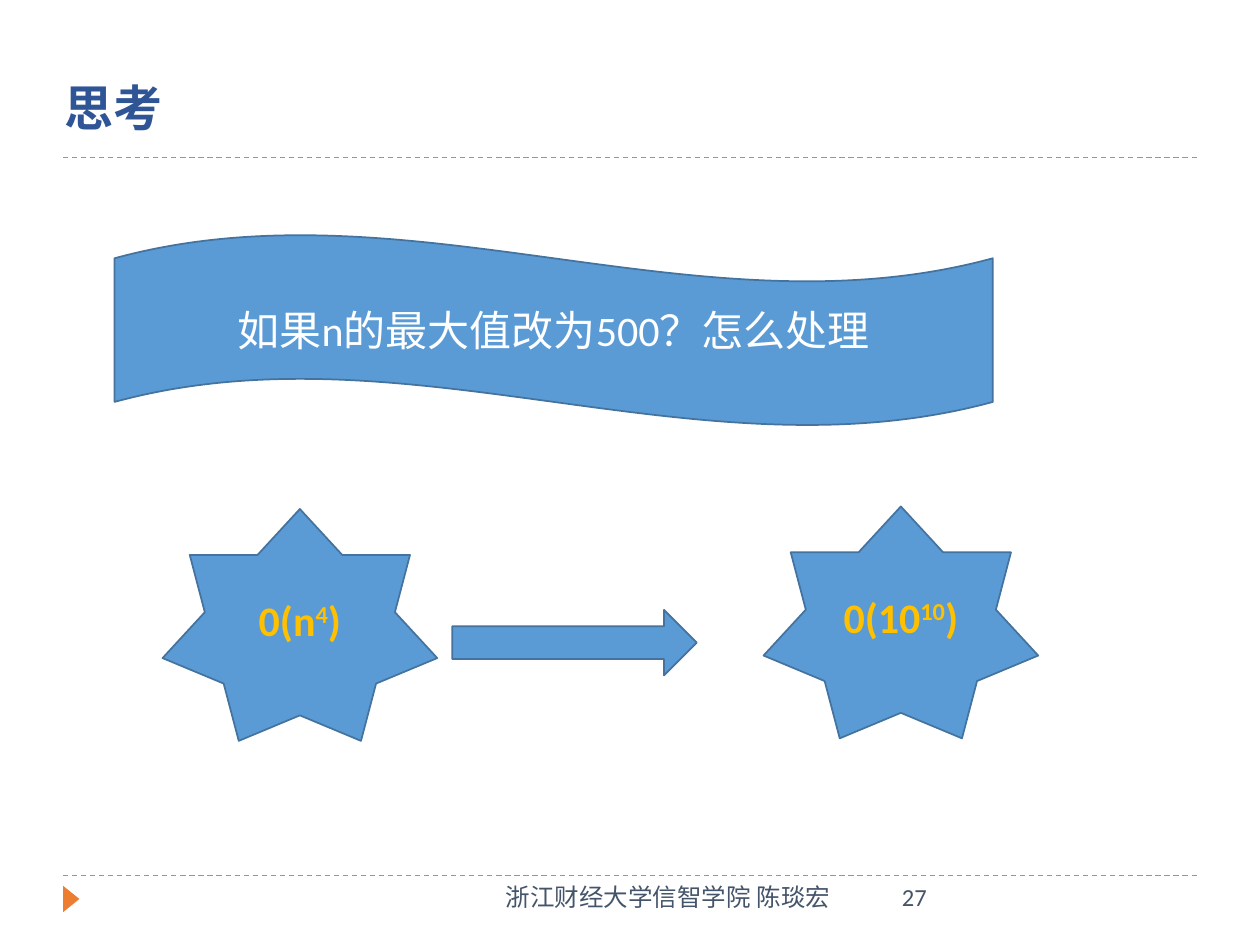
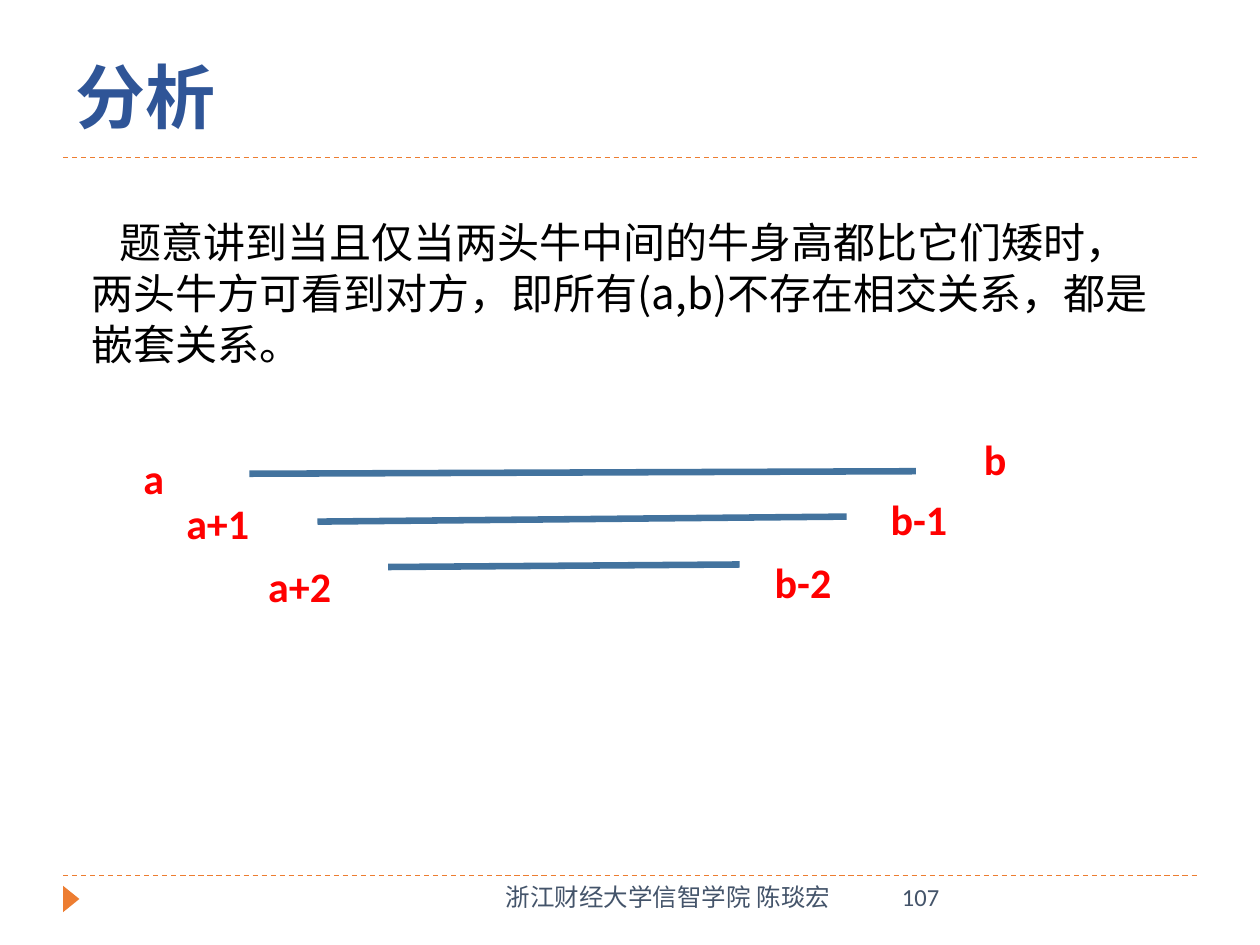
from dataclasses import dataclass

from pptx import Presentation
from pptx.dml.color import RGBColor
from pptx.enum.dml import MSO_LINE
from pptx.enum.shapes import MSO_CONNECTOR, MSO_SHAPE
from pptx.enum.text import MSO_ANCHOR, PP_ALIGN
from pptx.oxml.ns import qn
from pptx.oxml.xmlchemy import OxmlElement
from pptx.util import Pt

PX = 9144  # 100 px to the inch
TITLE_ONLY = 5
STRAIGHT = MSO_CONNECTOR.STRAIGHT
DASH = MSO_LINE.DASH
WAVE, STAR = MSO_SHAPE.WAVE, MSO_SHAPE.STAR_7_POINT
ARROW, TRIANGLE = MSO_SHAPE.RIGHT_ARROW, MSO_SHAPE.ISOSCELES_TRIANGLE
TOP, MIDDLE = MSO_ANCHOR.TOP, MSO_ANCHOR.MIDDLE
LEFT, CENTER, RIGHT = PP_ALIGN.LEFT, PP_ALIGN.CENTER, PP_ALIGN.RIGHT


@dataclass(frozen=True)
class Theme:
    latin: str = "Calibri"
    cjk: str = "Noto Sans CJK SC"
    accent: str = "ED7D31"
    footer: str = "44546A"
    title: str = "2F5597"
    fill: str = "5B9BD5"
    outline: str = "43739E"
    on_fill: str = "FFFFFF"
    formula: str = "FFC000"
    body: str = "000000"
    label: str = "FF0000"
    footer_size: int = 14
    body_size: int = 24


THEME = Theme()
FOOTER_TEXT = "浙江财经大学信智学院 陈琰宏"


def px(*lengths):
    return [round(length * PX) for length in lengths]


def rgb(code):
    return RGBColor.from_string(code)


def style_run(run, size, color, bold=False, latin=THEME.latin):
    font = run.font
    font.size, font.bold, font.name = Pt(size), bold, latin
    font.color.rgb = rgb(color)
    east_asian = OxmlElement("a:ea")
    east_asian.set("typeface", THEME.cjk)
    run._r.get_or_add_rPr().find(qn("a:latin")).addnext(east_asian)


def add_text(shapes, box, text, size, color, align=LEFT, wrap=True, **style):
    frame = shapes.add_textbox(*px(*box)).text_frame
    frame.word_wrap, frame.vertical_anchor = wrap, TOP
    paragraph = frame.paragraphs[0]
    paragraph.text, paragraph.alignment = text, align
    style_run(paragraph.runs[0], size, color, **style)
    return paragraph


def add_line(shapes, start, end, color, width, dash=None):
    line = shapes.add_connector(STRAIGHT, *px(*start, *end))
    line.line.color.rgb, line.line.width = rgb(color), Pt(width)
    if dash:
        line.line.dash_style = dash
    line._element.spPr.append(OxmlElement("a:effectLst"))


def add_block(shapes, kind, box, fill=THEME.fill, outline=THEME.outline):
    block = shapes.add_shape(kind, *px(*box))
    block.shadow.inherit = False
    block.fill.solid()
    block.fill.fore_color.rgb = rgb(fill)
    if outline:
        block.line.color.rgb, block.line.width = rgb(outline), Pt(1)
    else:
        block.line.fill.background()
    return block


def write_centred(block, parts, color, bold=False):
    """Write the parts on one line; every second part is superscript."""
    frame = block.text_frame
    frame.word_wrap, frame.vertical_anchor = True, MIDDLE
    paragraph = frame.paragraphs[0]
    paragraph.alignment = CENTER
    for index, part in enumerate(parts):
        run = paragraph.add_run()
        run.text = part
        style_run(run, THEME.body_size, color, bold)
        if index % 2:
            run._r.get_or_add_rPr().set("baseline", "30000")


def place_title(slide, box, text, size):
    title = slide.shapes.title
    title.left, title.top, title.width, title.height = px(*box)
    frame = title.text_frame
    frame.text = text
    frame.word_wrap, frame.vertical_anchor = False, MIDDLE
    frame.paragraphs[0].alignment = LEFT
    style_run(frame.paragraphs[0].runs[0], size, THEME.title, True, THEME.cjk)


def add_frame(slide, box, number):
    """Dashed rules, corner marker and footer shared by the slides."""
    left, top, width, height = box
    shapes = slide.shapes
    for rule_y in (top, top + height):
        add_line(shapes, (left, rule_y), (left + width, rule_y),
                 THEME.accent, 0.75, DASH)
    bottom = top + height
    marker = add_block(shapes, TRIANGLE, (left - 4, bottom + 12, 21, 13),
                       THEME.accent, None)
    marker.rotation = 90
    for x, w, text, align in ((281, 338, FOOTER_TEXT, RIGHT),
                              (656, 225, str(number), LEFT)):
        add_text(shapes, (left + x, bottom, w, 40), text,
                 THEME.footer_size, THEME.footer, align)


def add_question(slide, box):
    banner = add_block(slide.shapes, WAVE, box)
    write_centred(banner, ["如果n的最大值改为500？怎么处理"], THEME.on_fill)


def add_growth(slide, box):
    """Complexity before and after the change, joined by an arrow."""
    left, top, width, height = box
    star_w, star_h = 218, 184
    stars = ((0, height - star_h, ["0(n", "4", ")"]),
             (width - star_w, 0, ["0(10", "10", ")"]))
    for x, y, formula in stars:
        star = add_block(slide.shapes, STAR, (left + x, top + y, star_w, star_h))
        write_centred(star, formula, THEME.formula, bold=True)
    add_block(slide.shapes, ARROW, (left + star_w + 12, top + 82, 194, 52))


def add_explanation(slide, box):
    text = ("题意讲到当且仅当两头牛中间的牛身高都比它们矮时，两头牛方可看到对方，"
            "即所有(a,b)不存在相交关系，都是嵌套关系。")
    paragraph = add_text(slide.shapes, box, text, THEME.body_size, THEME.body,
                         latin=THEME.cjk)
    paragraph.line_spacing = Pt(29)
    paragraph._p.get_or_add_pPr().set("indent", str(px(22)[0]))


def add_nested_intervals(slide, left, top):
    shapes = slide.shapes.add_group_shape().shapes
    intervals = (((94, 37), (623, 35)),
                 ((148, 75), (568, 71)),
                 ((204, 111), (483, 109)))
    for (x1, y1), (x2, y2) in intervals:
        add_line(shapes, (left + x1, top + y1), (left + x2, top + y2),
                 THEME.outline, 3.75)
    ends = (("a", 0, 15, 49), ("b", 667, 0, 49),
            ("a+1", 34, 51, 81), ("b-1", 593, 48, 74),
            ("a+2", 99, 101, 86), ("b-2", 501, 98, 77))
    for name, x, y, width in ends:
        add_text(shapes, (left + x, top + y, width, 50), name,
                 THEME.body_size, THEME.label, bold=True)


def new_slide(deck, number, title_box, title, title_size):
    slide = deck.slides.add_slide(deck.slide_layouts[TITLE_ONLY])
    add_frame(slide, (50, 125, 900, 570), number)
    place_title(slide, title_box, title, title_size)
    return slide


def build_thinking(deck):
    slide = new_slide(deck, 27, (41, 56, 98, 57), "思考", 28)
    add_question(slide, (91, 186, 697, 152))
    add_growth(slide, (129, 402, 695, 186))


def build_analysis(deck):
    slide = new_slide(deck, 107, (50, 37, 148, 77), "分析", 40)
    add_explanation(slide, (63, 167, 869, 131))
    add_nested_intervals(slide, 104, 339)


def main():
    deck = Presentation()
    deck.slide_width, deck.slide_height = px(1000, 750)
    build_thinking(deck)
    build_analysis(deck)
    deck.save("out.pptx")


if __name__ == "__main__":
    main()
